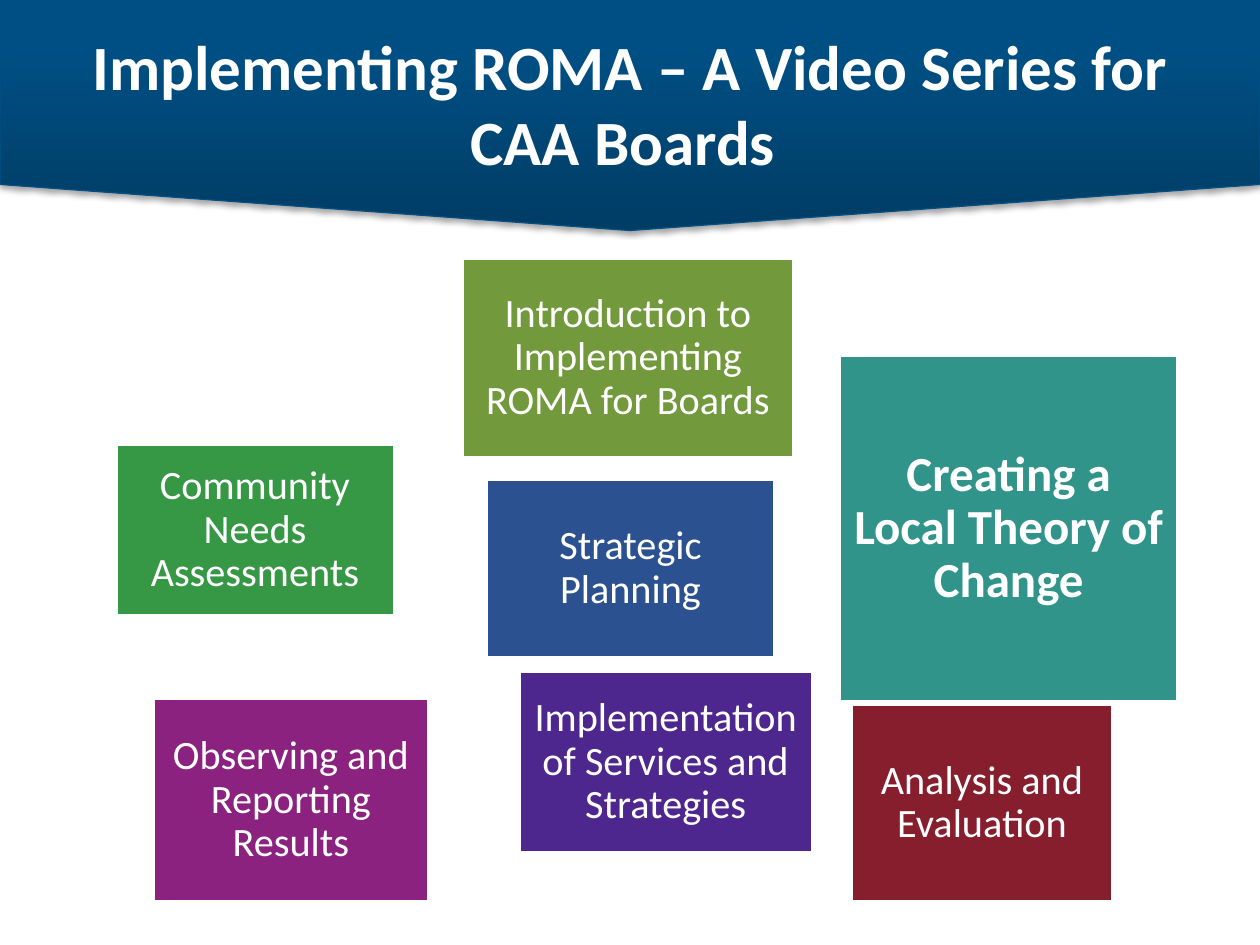
from lxml import etree
from pptx import Presentation
from pptx.dml.color import RGBColor
from pptx.enum.shapes import MSO_SHAPE as Shape
from pptx.enum.text import MSO_ANCHOR as Anchor, PP_ALIGN as Align
from pptx.oxml.ns import qn
from pptx.util import Inches, Pt

COLORS = {
    "white": "FFFFFF", "shadow": "000000", "banner edge": "005085",
    "banner dark": "003D65", "banner mid": "004F84", "banner light": "005084",
    "olive": "72993C", "green": "369745", "teal": "31948A", "blue": "2C5191",
    "violet": "4D278E", "purple": "8B227F", "red": "871E2E",
}


def rgb(name):
    return RGBColor.from_string(COLORS[name])


def write(frame, text, size, bold=False, spacing=None, inset=0.1):
    frame.word_wrap = True
    frame.vertical_anchor = Anchor.MIDDLE
    frame.margin_left = frame.margin_right = Inches(inset)
    frame.margin_top = frame.margin_bottom = Inches(inset)
    paragraph = frame.paragraphs[0]
    paragraph.alignment = Align.CENTER
    if spacing:
        paragraph.line_spacing = spacing
    run = paragraph.add_run()
    run.text = text
    run.font.name = "Calibri"
    run.font.size = Pt(size)
    run.font.bold = bold
    run.font.color.rgb = rgb("white")


prs = Presentation()
prs.slide_width, prs.slide_height = Inches(10), Inches(7.5)
slide = prs.slides.add_slide(prs.slide_layouts[6])

# Banner: dark at the bottom, lighter towards the top
banner = slide.shapes.add_shape(
    Shape.FLOWCHART_OFFPAGE_CONNECTOR, 0, 0, Inches(10), Inches(1.83))
banner.fill.gradient()
banner.fill.gradient_angle = 90
banner.line.color.rgb = rgb("banner edge")
banner.line.width = Pt(0.75)
banner.shadow.inherit = False

props = banner._element.spPr
stops = props.find(qn("a:gradFill")).find(qn("a:gsLst"))
for old_stop in list(stops):
    stops.remove(old_stop)
for percent, name in ((0, "banner dark"), (80, "banner mid"), (100, "banner light")):
    stop = etree.SubElement(stops, qn("a:gs"), pos=str(percent * 1000))
    etree.SubElement(stop, qn("a:srgbClr"), val=COLORS[name])

# Soft shadow below the banner
shadow = etree.SubElement(
    props.find(qn("a:effectLst")), qn("a:outerShdw"), blurRad=str(Pt(3.1)),
    dist=str(Pt(1.8)), dir="5400000", rotWithShape="0")
shade = etree.SubElement(shadow, qn("a:srgbClr"), val=COLORS["shadow"])
etree.SubElement(shade, qn("a:alpha"), val="35000")

# Title
title = slide.shapes.add_textbox(Inches(0.5), Inches(0.19), Inches(9), Inches(1.25))
write(title.text_frame, "Implementing ROMA – A Video Series for CAA Boards ",
      36, bold=True)

# Video topics: text, colour, left, top, width, height
topics = [
    ("Introduction to Implementing ROMA for Boards", "olive", 3.67, 2.05, 2.63, 1.58),
    ("Community Needs Assessments", "green", 0.92, 3.53, 2.21, 1.36),
    ("Creating a Local Theory of Change", "teal", 6.66, 2.82, 2.69, 2.75),
    ("Strategic Planning", "blue", 3.86, 3.8, 2.29, 1.42),
    ("Implementation of Services and Strategies", "violet", 4.12, 5.33, 2.33, 1.44),
    ("Observing and Reporting Results", "purple", 1.22, 5.54, 2.18, 1.62),
    ("Analysis and Evaluation", "red", 6.76, 5.59, 2.07, 1.57),
]
for text, color, *box in topics:
    topic = slide.shapes.add_shape(Shape.RECTANGLE, *map(Inches, box))
    topic.shadow.inherit = False
    topic.fill.solid()
    topic.fill.fore_color.rgb = rgb(color)
    topic.line.color.rgb = rgb("white")
    topic.line.width = Pt(2)
    current = color == "teal"  # the video this slide introduces
    write(topic.text_frame, text, 28 if current else 23, bold=current,
          spacing=0.9, inset=0.12 if current else 0.1)

prs.save("out.pptx")
